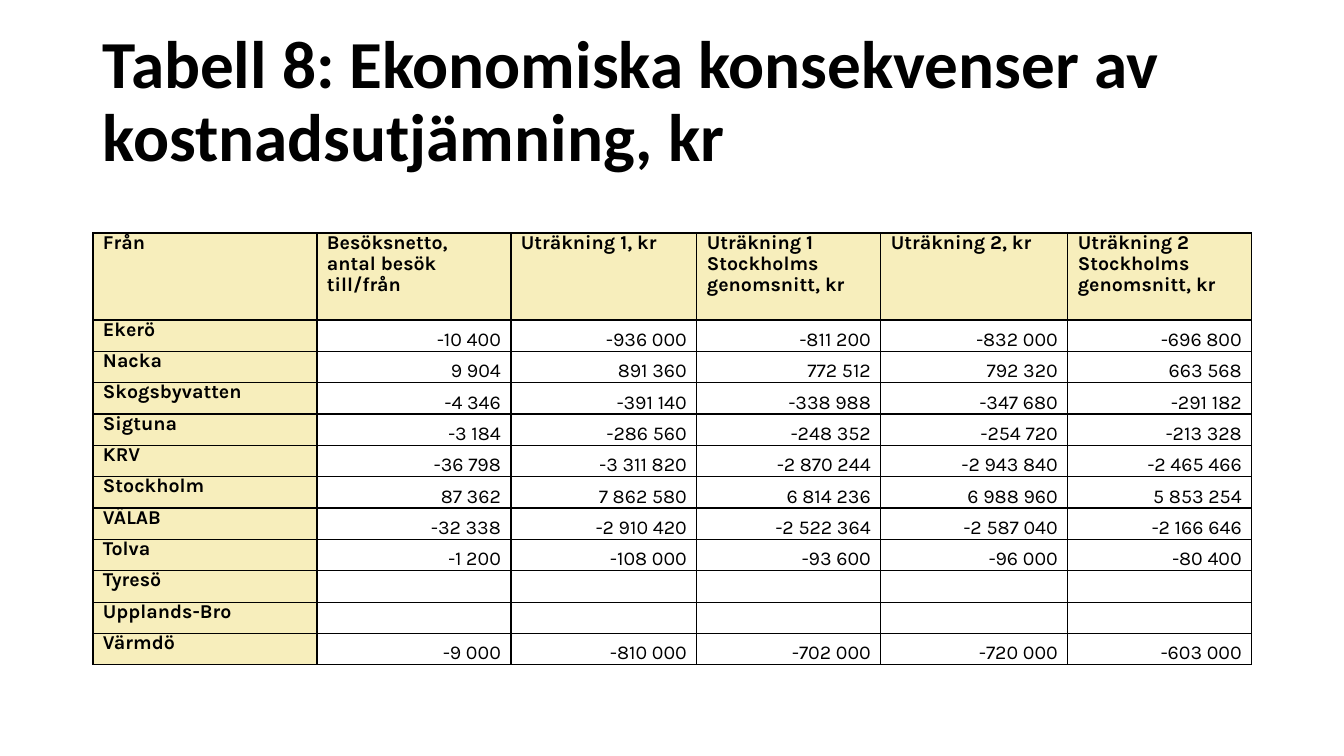
from lxml import etree
from pptx import Presentation
from pptx.dml.color import RGBColor
from pptx.enum.text import MSO_ANCHOR, PP_ALIGN
from pptx.oxml.ns import qn
from pptx.util import Pt

BLACK = RGBColor(0x00, 0x00, 0x00)
CREAM = RGBColor(0xF7, 0xEE, 0xBC)
LEFT, RIGHT = PP_ALIGN.LEFT, PP_ALIGN.RIGHT
TOP, MIDDLE, BOTTOM = MSO_ANCHOR.TOP, MSO_ANCHOR.MIDDLE, MSO_ANCHOR.BOTTOM
PX_PER_INCH = 100.8

HEADERS = [
    "Från",
    "Besöksnetto, antal besök till/från",
    "Uträkning 1, kr",
    "Uträkning 1 Stockholms genomsnitt, kr",
    "Uträkning 2, kr",
    "Uträkning 2 Stockholms genomsnitt, kr",
]
NET_VISITS = {
    "Ekerö": -10400,
    "Nacka": 9904,
    "Skogsbyvatten": -4346,
    "Sigtuna": -3184,
    "KRV": -36798,
    "Stockholm": 87362,
    "VÄLAB": -32338,
    "Tolva": -1200,
    "Tyresö": None,
    "Upplands-Bro": None,
    "Värmdö": -9000,
}
KR_PER_VISIT = [90, 78, 80, 67]
COLUMN_WIDTHS = [224, 194, 186, 184, 187, 184]
HEADER_HEIGHT = 87
BODY_HEIGHT = 345


def px(n):
    return round(n * 914400 / PX_PER_INCH)


def amount(n):
    return f"{n:,}".replace(",", " ")


def table_rows():
    rows = [HEADERS]
    for name, net in NET_VISITS.items():
        if net is None:
            values = [""] * (len(HEADERS) - 1)
        else:
            values = [amount(net * rate) for rate in [1] + KR_PER_VISIT]
        rows.append([name] + values)
    return rows


class SlideBuilder:
    title_font = "Calibri"
    table_font = "Karla"

    def __init__(self, slide):
        self.s = slide

    def style(self, p, font, size, bold):
        for r in p.runs:
            r.font.name = font
            r.font.size = Pt(size)
            r.font.bold = bold
            r.font.color.rgb = BLACK

    def title(self, text, x, y, w, h):
        sp = self.s.shapes.add_textbox(px(x), px(y), px(w), px(h))
        tf = sp.text_frame
        tf.word_wrap = True
        tf.vertical_anchor = MIDDLE
        tf.text = text
        p = tf.paragraphs[0]
        p.line_spacing = 0.9
        p.space_after = Pt(6)
        self.style(p, self.title_font, 48, True)

    def borders(self, cell):
        tcPr = cell._tc.get_or_add_tcPr()
        for i, side in enumerate(("a:lnL", "a:lnR", "a:lnT", "a:lnB")):
            ln = etree.Element(qn(side), w=str(Pt(1)))
            fill = etree.SubElement(ln, qn("a:solidFill"))
            etree.SubElement(fill, qn("a:srgbClr"), val=str(BLACK))
            tcPr.insert(i, ln)

    def cell(self, cell, text, label):
        cell.margin_left = cell.margin_right = px(10)
        cell.margin_top = cell.margin_bottom = 0
        cell.vertical_anchor = TOP if label else BOTTOM
        if label:
            cell.fill.solid()
            cell.fill.fore_color.rgb = CREAM
        else:
            cell.fill.background()
        self.borders(cell)
        cell.text_frame.text = text
        p = cell.text_frame.paragraphs[0]
        p.alignment = LEFT if label else RIGHT
        p.line_spacing = Pt(15)
        p.space_before = Pt(8.5)
        self.style(p, self.table_font, 14, label)

    def table(self, rows, x, y, widths, header_height, body_height):
        frame = self.s.shapes.add_table(
            len(rows), len(widths), px(x), px(y),
            px(sum(widths)), px(header_height + body_height))
        table = frame.table
        table.first_row = False
        table.horz_banding = False
        for column, width in zip(table.columns, widths):
            column.width = px(width)
        for i, values in enumerate(rows):
            table.rows[i].height = (
                px(body_height) // (len(rows) - 1) if i else px(header_height))
            for j, text in enumerate(values):
                self.cell(table.cell(i, j), text, i == 0 or j == 0)


def main():
    prs = Presentation()
    prs.slide_width = px(1344)
    prs.slide_height = px(756)
    builder = SlideBuilder(prs.slides.add_slide(prs.slide_layouts[6]))
    builder.title("Tabell 8: Ekonomiska konsekvenser av kostnadsutjämning, kr",
                  93, 20, 1159, 166)
    builder.table(table_rows(), 93, 233, COLUMN_WIDTHS,
                  HEADER_HEIGHT, BODY_HEIGHT)
    prs.save("out.pptx")


if __name__ == "__main__":
    main()
